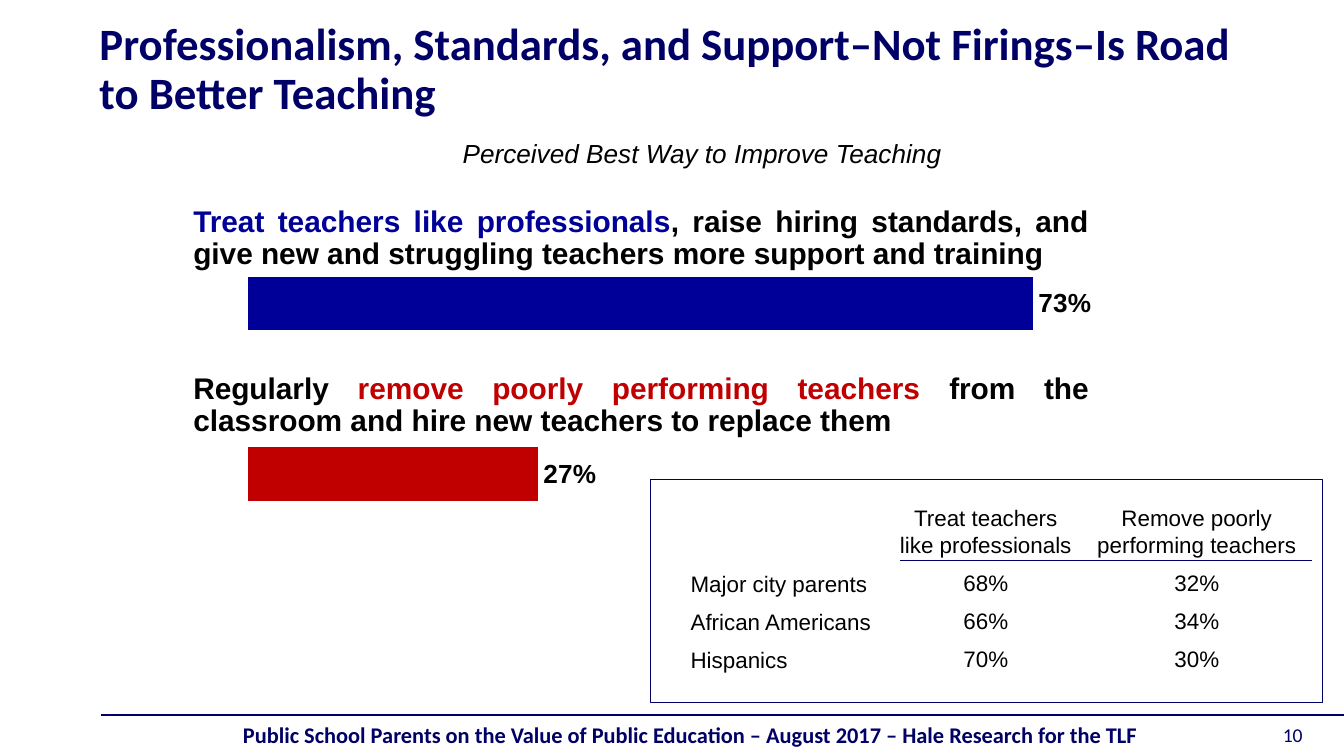
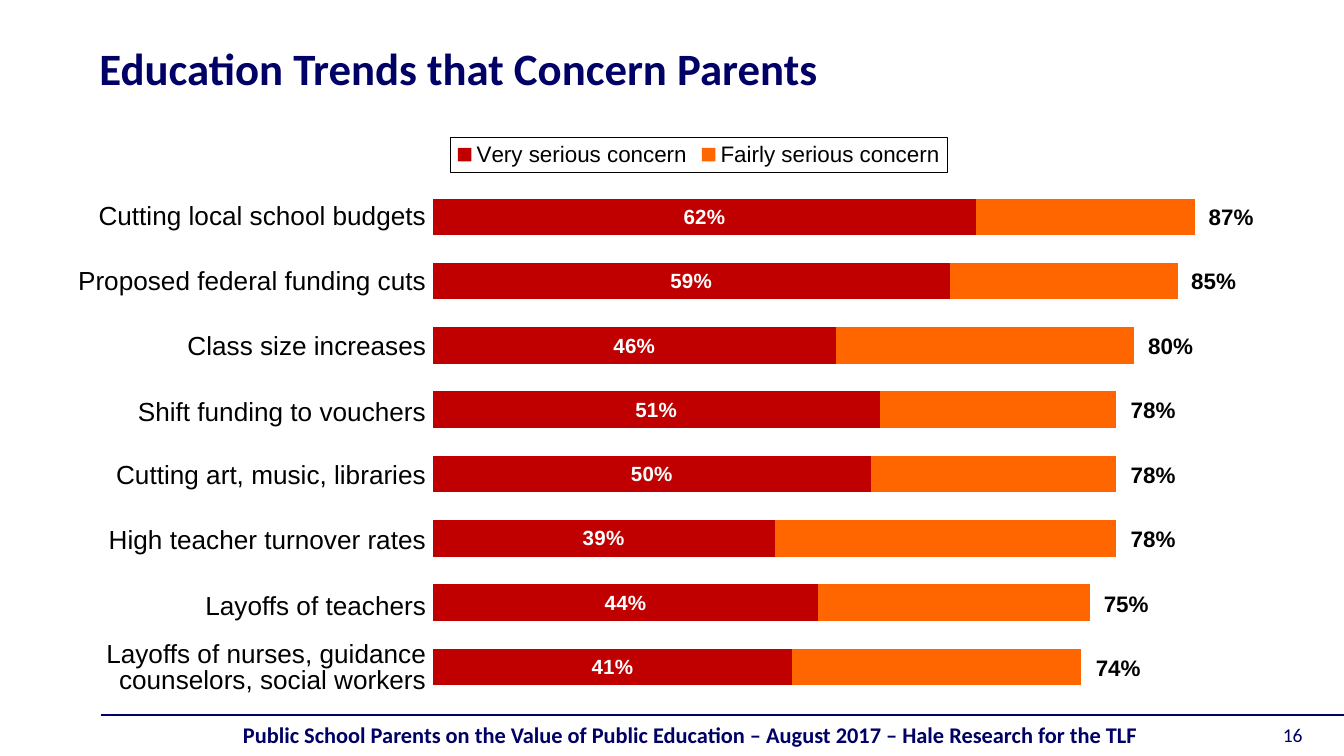
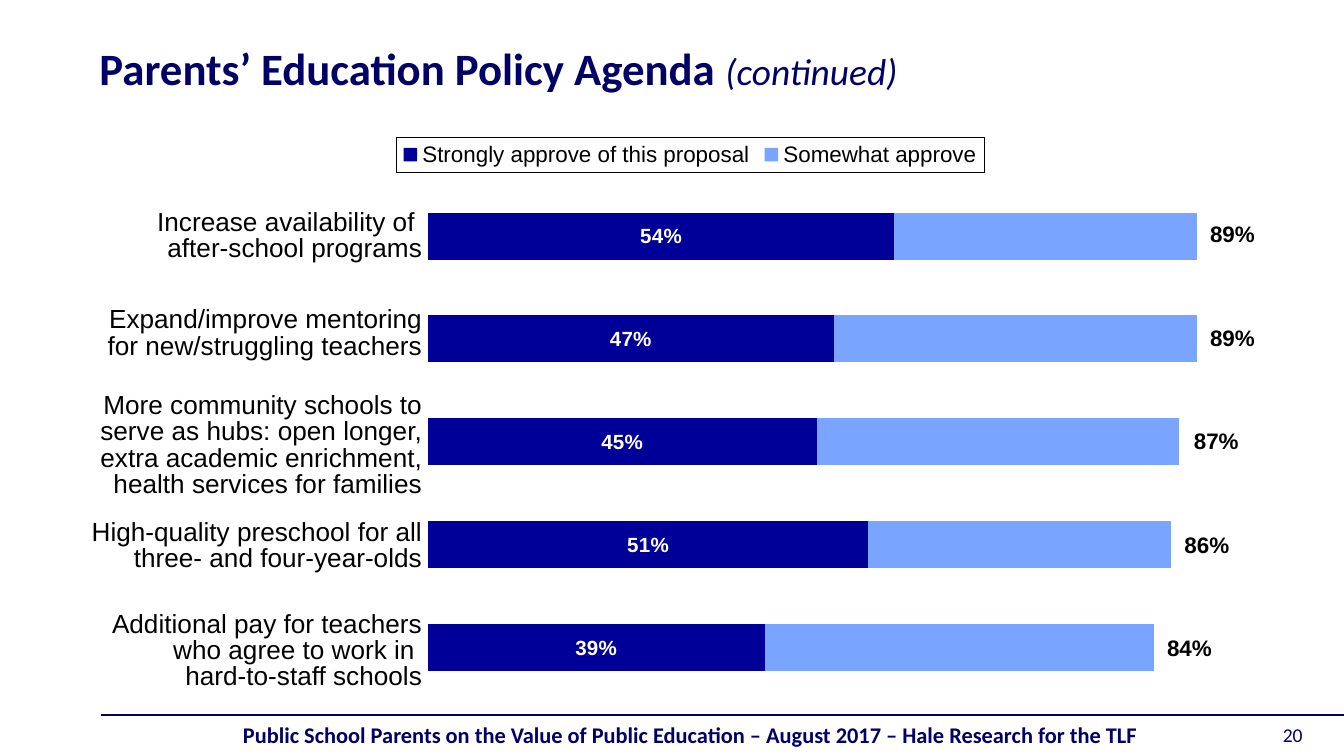
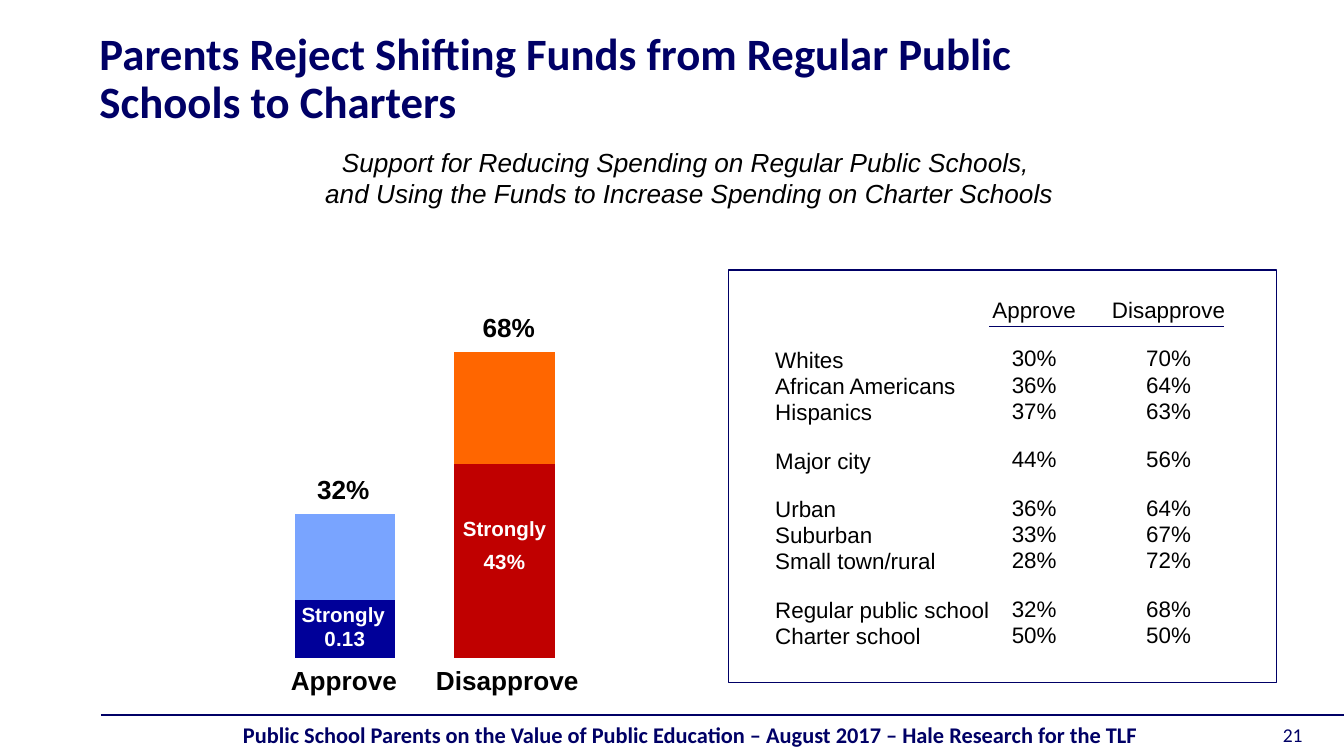
from dataclasses import dataclass

from lxml.etree import SubElement
from pptx import Presentation
from pptx.chart.data import CategoryChartData
from pptx.dml.color import RGBColor
from pptx.enum.chart import XL_CHART_TYPE, XL_LABEL_POSITION, XL_LEGEND_POSITION
from pptx.enum.shapes import MSO_CONNECTOR, MSO_SHAPE
from pptx.enum.text import MSO_ANCHOR, MSO_AUTO_SIZE, PP_ALIGN
from pptx.oxml import parse_xml
from pptx.oxml.ns import nsdecls, qn
from pptx.util import Pt

PX = 9144  # EMU in one px, 100 px to the inch


@dataclass(frozen=True)
class Theme:
    heading_font: str = "Calibri"
    body_font: str = "Arial"
    navy: str = "000066"
    blue: str = "000099"
    light_blue: str = "79A4FF"
    red: str = "C00000"
    orange: str = "FF6600"
    black: str = "000000"
    white: str = "FFFFFF"
    title_size: float = 24
    title_note_size: float = 20
    chart_size: float = 18
    statement_size: float = 16
    label_size: float = 14
    small_size: float = 12
    bar_size: float = 11
    number_size: float = 10.5
    line_width: float = 0.75


@dataclass
class Series:
    name: str
    values: tuple
    color: str
    label_format: str = ""


THEME = Theme()
FOOTER = ("Public School Parents on the Value of Public Education – August 2017 – "
          "Hale Research for the TLF")
TITLE_BOX = (64, 5, 863, 94)


def emu(lengths):
    return [length * PX for length in lengths]


def style_font(font, size=None, color=None, bold=None, italic=None, name=None):
    if size:
        font.size = Pt(size)
    if color:
        font.color.rgb = RGBColor.from_string(color)
    if name:
        font.name = name
    if bold is not None:
        font.bold = bold
    if italic is not None:
        font.italic = italic


class Deck:
    """Holds the theme, the presentation and the slide being filled."""

    def __init__(self, theme):
        self.theme = theme
        self.presentation = Presentation()
        self.presentation.slide_width = 1000 * PX
        self.presentation.slide_height = 1000 * PX * 9 // 16
        self.layout = self.presentation.slide_layouts[5]
        self.slide = None

    def add_slide(self, title, number, box=TITLE_BOX):
        first = self.slide is None
        self.slide = self.presentation.slides.add_slide(self.layout)
        if first:
            self.add_footer_to_layout()
        self.title(title, box)
        self.text((915, 533, 64, 25), [str(number)], self.theme.number_size,
                  color=self.theme.navy, align=PP_ALIGN.RIGHT, name=self.theme.heading_font)

    def add_footer_to_layout(self):
        rule = self.line((75, 532), (1000, 532))
        footer = self.text((171, 532, 694, 30), [FOOTER], self.theme.small_size, wrap=False,
                           color=self.theme.navy, bold=True, align=PP_ALIGN.JUSTIFY,
                           name=self.theme.heading_font)
        for shape_id, shape in enumerate((rule, footer), start=100):
            shape.element.xpath(".//p:cNvPr")[0].set("id", str(shape_id))
            self.layout.shapes.element.append(shape.element)

    def title(self, content, box):
        shape = self.slide.shapes.title
        shape.left, shape.top, shape.width, shape.height = emu(box)
        frame = shape.text_frame
        frame.auto_size = MSO_AUTO_SIZE.NONE
        frame.vertical_anchor = MSO_ANCHOR.MIDDLE
        self.fill_paragraph(frame.paragraphs[0], content, PP_ALIGN.LEFT, Pt(26),
                            size=self.theme.title_size, color=self.theme.navy, bold=True,
                            name=self.theme.heading_font)

    def fill_paragraph(self, paragraph, content, align, line, **font):
        """Content is a string, or a list of (text, font changes) runs."""
        paragraph.alignment = align
        if line:
            paragraph.line_spacing = line
        style_font(paragraph.font, **font)
        if isinstance(content, str):
            paragraph.text = content
            return
        for text, changes in content:
            run = paragraph.add_run()
            run.text = text
            style_font(run.font, **changes)

    def text(self, box, paragraphs, size, gaps=(), align=PP_ALIGN.LEFT, line=None,
             wrap=True, color=THEME.black, name=THEME.body_font, **font):
        """Gaps are the points of space before each paragraph after the first."""
        shape = self.slide.shapes.add_textbox(*emu(box))
        frame = shape.text_frame
        frame.word_wrap = wrap
        frame.auto_size = MSO_AUTO_SIZE.SHAPE_TO_FIT_TEXT
        for index, content in enumerate(paragraphs):
            paragraph = frame.add_paragraph() if index else frame.paragraphs[0]
            if index:
                paragraph.space_before = Pt(gaps[index - 1])
            self.fill_paragraph(paragraph, content, align, line,
                                size=size, color=color, name=name, **font)
        return shape

    def caption(self, box, content, size, **options):
        """One short centred bold text that does not wrap."""
        self.text(box, [content], size, wrap=False, align=PP_ALIGN.CENTER, bold=True, **options)

    def column(self, box, paragraphs, gap, **options):
        self.text(box, paragraphs, self.theme.small_size, gaps=[gap] * len(paragraphs),
                  wrap=False, **options)

    def line(self, start, end):
        connector = self.slide.shapes.add_connector(MSO_CONNECTOR.STRAIGHT, *emu(start + end))
        self.outline(connector)
        SubElement(connector.element.spPr, qn("a:effectLst"))
        return connector

    def frame(self, box):
        shape = self.slide.shapes.add_shape(MSO_SHAPE.RECTANGLE, *emu(box))
        shape.shadow.inherit = False
        shape.fill.background()
        self.outline(shape)

    def outline(self, shape):
        shape.line.color.rgb = RGBColor.from_string(self.theme.navy)
        shape.line.width = Pt(self.theme.line_width)

    def chart(self, kind, box, series_list, gap, overlap=0, plot_area=None,
              label_size=THEME.bar_size, label_color=THEME.white):
        data = CategoryChartData()
        data.categories = [str(n + 1) for n in range(len(series_list[0].values))]
        for series in series_list:
            data.add_series(series.name, series.values)
        chart = self.slide.shapes.add_chart(kind, *emu(box), data).chart
        chart.has_title = False
        chart.has_legend = False
        style_font(chart.font, self.theme.chart_size, self.theme.black,
                   name=self.theme.body_font)
        for axis in (chart.category_axis, chart.value_axis):
            axis.visible = False
            axis.has_major_gridlines = False
        plot = chart.plots[0]
        plot.gap_width, plot.overlap = gap, overlap
        plot.vary_by_categories = False
        for series, drawn in zip(series_list, plot.series):
            drawn.format.fill.solid()
            drawn.format.fill.fore_color.rgb = RGBColor.from_string(series.color)
            if series.label_format:
                labels = drawn.data_labels
                labels.show_value = True
                labels.number_format = series.label_format
                labels.number_format_is_linked = False
                style_font(labels.font, label_size, label_color, bold=True)
        if plot_area:
            self.place_plot(chart, plot_area)
        return chart

    def place_plot(self, chart, plot_area):
        """Sets the inner plot area as shares of the chart: x, y, width, height."""
        area = chart.element.xpath(".//c:plotArea")[0]
        for layout in area.xpath("./c:layout"):
            area.remove(layout)
        modes = '<c:layoutTarget val="inner"/><c:xMode val="edge"/><c:yMode val="edge"/>'
        sizes = "".join(f'<c:{tag} val="{share}"/>' for tag, share in zip("xywh", plot_area))
        area.insert(0, parse_xml(f'<c:layout {nsdecls("c")}><c:manualLayout>{modes}{sizes}'
                                 "</c:manualLayout></c:layout>"))

    def legend(self, chart):
        chart.has_legend = True
        chart.legend.position = XL_LEGEND_POSITION.TOP
        chart.legend.include_in_layout = False
        style_font(chart.legend.font, self.theme.small_size)
        chart.element.xpath(".//c:legend/c:txPr")[0].addprevious(parse_xml(
            f'<c:spPr {nsdecls("c", "a")}><a:ln w="3175"><a:solidFill>'
            f'<a:srgbClr val="{self.theme.black}"/></a:solidFill></a:ln></c:spPr>'))

    def lower_label(self, series, share):
        """Moves the first label of a series down by a share of the chart height."""
        style_font(series.points[0].data_label.font, self.theme.bar_size, self.theme.white,
                   bold=True)
        label = series.data_labels._element.xpath("./c:dLbl")[0]
        label.insert(1, parse_xml(
            f'<c:layout {nsdecls("c")}><c:manualLayout><c:x val="0"/><c:y val="{share}"/>'
            "</c:manualLayout></c:layout>"))

    def stacked_bars(self, width, series_list, gap, first_total, pitch):
        """Stacked bars with a legend, and each bar's total at its end."""
        left, share_left, share_width = 64, 0.283, 0.715
        chart = self.chart(XL_CHART_TYPE.BAR_STACKED, (left, 95, width, 442), series_list, gap,
                           overlap=100, plot_area=(share_left, 0.096, share_width, 0.866))
        self.legend(chart)
        totals = [sum(pair) for pair in zip(*(series.values for series in series_list))]
        for row, total in enumerate(reversed(totals)):
            bar_end = round(left + width * (share_left + share_width * total))
            self.caption((bar_end, first_total + row * pitch, 54, 30), f"{total:.0%}",
                         self.theme.small_size)

    def bar_names(self, box, names, gaps):
        self.text(box, names, self.theme.label_size, gaps=gaps, align=PP_ALIGN.RIGHT,
                  line=Pt(14))


def add_better_teaching(deck):
    theme = deck.theme
    deck.add_slide("Professionalism, Standards, and Support–Not Firings–Is Road to Better "
                   "Teaching", 10)
    chart = deck.chart(XL_CHART_TYPE.BAR_CLUSTERED, (171, 157, 667, 265),
                       [Series("Series 1", (0.27, 0.73), theme.blue, "0%")], gap=217,
                       label_size=theme.label_size, label_color=theme.black)
    bars = chart.plots[0].series[0]
    bars.data_labels.position = XL_LABEL_POSITION.OUTSIDE_END
    remove_bar = bars.points[0].format.fill
    remove_bar.solid()
    remove_bar.fore_color.rgb = RGBColor.from_string(theme.red)

    deck.text((127, 102, 791, 29), ["Perceived Best Way to Improve Teaching"],
              theme.label_size, align=PP_ALIGN.CENTER, line=0.8, italic=True)
    statements = [
        (149, [("Treat teachers like professionals", {"color": theme.blue}),
               (", raise hiring standards, and give new and struggling teachers more support "
                "and training ", {})]),
        (273, [("Regularly ", {}),
               ("remove poorly performing teachers", {"color": theme.red}),
               (" from the classroom and hire new teachers to replace them ", {})]),
    ]
    for top, runs in statements:
        deck.text((134, top, 686, 58), [runs], theme.statement_size, align=PP_ALIGN.JUSTIFY,
                  line=Pt(17), bold=True)

    deck.frame((484, 357, 500, 166))
    deck.column((504, 419, 155, 88), ["Major city parents", "African Americans", "Hispanics"], 6)
    deck.column((659, 370, 149, 136),
                ["Treat teachers\nlike professionals", "68%", "66%", "70%"], 6,
                align=PP_ALIGN.CENTER)
    deck.column((806, 370, 169, 136),
                ["Remove poorly\nperforming teachers", "32%", "34%", "30%"], 6,
                align=PP_ALIGN.CENTER)
    deck.line((670, 417), (976, 417))


def add_trends(deck):
    theme = deck.theme
    deck.add_slide("Education Trends that Concern Parents", 16)
    deck.stacked_bars(912, [
        Series("Very serious concern", (0.41, 0.44, 0.39, 0.5, 0.51, 0.46, 0.59, 0.62),
               theme.red, "0%"),
        Series("Fairly serious concern", (0.33, 0.31, 0.39, 0.28, 0.27, 0.34, 0.26, 0.25),
               theme.orange),
    ], gap=76, first_total=146, pitch=48)
    deck.bar_names((39, 147, 288, 392), [
        "Cutting local school budgets",
        "Proposed federal funding cuts",
        "Class size increases",
        "Shift funding to vouchers",
        "Cutting art, music, libraries",
        "High teacher turnover rates",
        "Layoffs of teachers",
        "Layoffs of nurses, guidance counselors, social workers",
    ], gaps=(21, 21, 21, 20, 21, 21, 12))


def add_policy_agenda(deck):
    theme = deck.theme
    note = {"size": theme.title_note_size, "bold": False, "italic": True}
    deck.add_slide([("Parents’ Education Policy Agenda ", {}), ("(continued)", note)], 20)
    deck.stacked_bars(899, [
        Series("Strongly approve of this proposal", (0.39, 0.51, 0.45, 0.47, 0.54),
               theme.blue, "0%"),
        Series("Somewhat approve", (0.45, 0.35, 0.42, 0.42, 0.35), theme.light_blue),
    ], gap=119, first_total=159, pitch=77)
    deck.bar_names((49, 152, 275, 371), [
        "Increase availability of \nafter-school programs",
        "Expand/improve mentoring for new/struggling teachers",
        "More community schools to serve as hubs: open longer, extra academic enrichment, "
        "health services for families",
        "High-quality preschool for all three- and four-year-olds",
        "Additional pay for teachers who agree to work in \nhard-to-staff schools",
    ], gaps=(24, 18, 12, 21))


def add_charter_funds(deck):
    theme = deck.theme
    deck.add_slide("Parents Reject Shifting Funds from Regular Public Schools to Charters", 21,
                   box=(64, 12, 811, 94))
    chart = deck.chart(XL_CHART_TYPE.COLUMN_STACKED, (191, 136, 369, 369), [
        Series("Series 1", (0.13, None, None), theme.blue, "General"),
        Series("Series 2", (0.19, None, None), theme.light_blue),
        Series("Series 3", (None, 0.43, None), theme.red, "0%"),
        Series("Series 4", (None, 0.25, None), theme.orange),
    ], gap=59, overlap=100, plot_area=(0.017, 0.05, 0.966, 0.909))
    chart.value_axis.minimum_scale, chart.value_axis.maximum_scale = 0, 1
    deck.lower_label(chart.plots[0].series[0], 0.02)

    deck.text((160, 104, 706, 57),
              ["Support for Reducing Spending on Regular Public Schools, \n"
               "and Using the Funds to Increase Spending on Charter Schools"],
              theme.label_size, align=PP_ALIGN.CENTER, italic=True)
    columns = [
        ("Approve", (206, 493, 100, 30), "32%", (226, 347, 59, 34), (214, 445, 83, 27)),
        ("Disapprove", (314, 493, 127, 30), "68%", (349, 227, 59, 34), (334, 381, 83, 27)),
    ]
    for answer, answer_box, total, total_box, strongly_box in columns:
        deck.caption(answer_box, answer, theme.label_size, line=Pt(14))
        deck.caption(total_box, total, theme.label_size)
        deck.caption(strongly_box, "Strongly", theme.bar_size, line=Pt(12), color=theme.white)

    deck.frame((542, 201, 408, 307))
    deck.column((567, 253, 180, 237), [
        "Whites\nAfrican Americans\nHispanics",
        "Major city",
        "Urban\nSuburban\nSmall town/rural",
        "Regular public school\nCharter school",
    ], 12, line=Pt(14))
    deck.column((728, 216, 83, 274),
                ["Approve", "30%\n36%\n37%", "44%", "36%\n33%\n28%", "32%\n50%"], 12,
                line=Pt(14), align=PP_ALIGN.CENTER)
    deck.column((817, 216, 105, 274),
                ["Disapprove", "70%\n64%\n63%", "56%", "64%\n67%\n72%", "68%\n50%"], 12,
                line=Pt(14), align=PP_ALIGN.CENTER)
    deck.line((736, 243), (911, 243))


def main():
    deck = Deck(THEME)
    add_better_teaching(deck)
    add_trends(deck)
    add_policy_agenda(deck)
    add_charter_funds(deck)
    deck.presentation.save("out.pptx")


if __name__ == "__main__":
    main()
